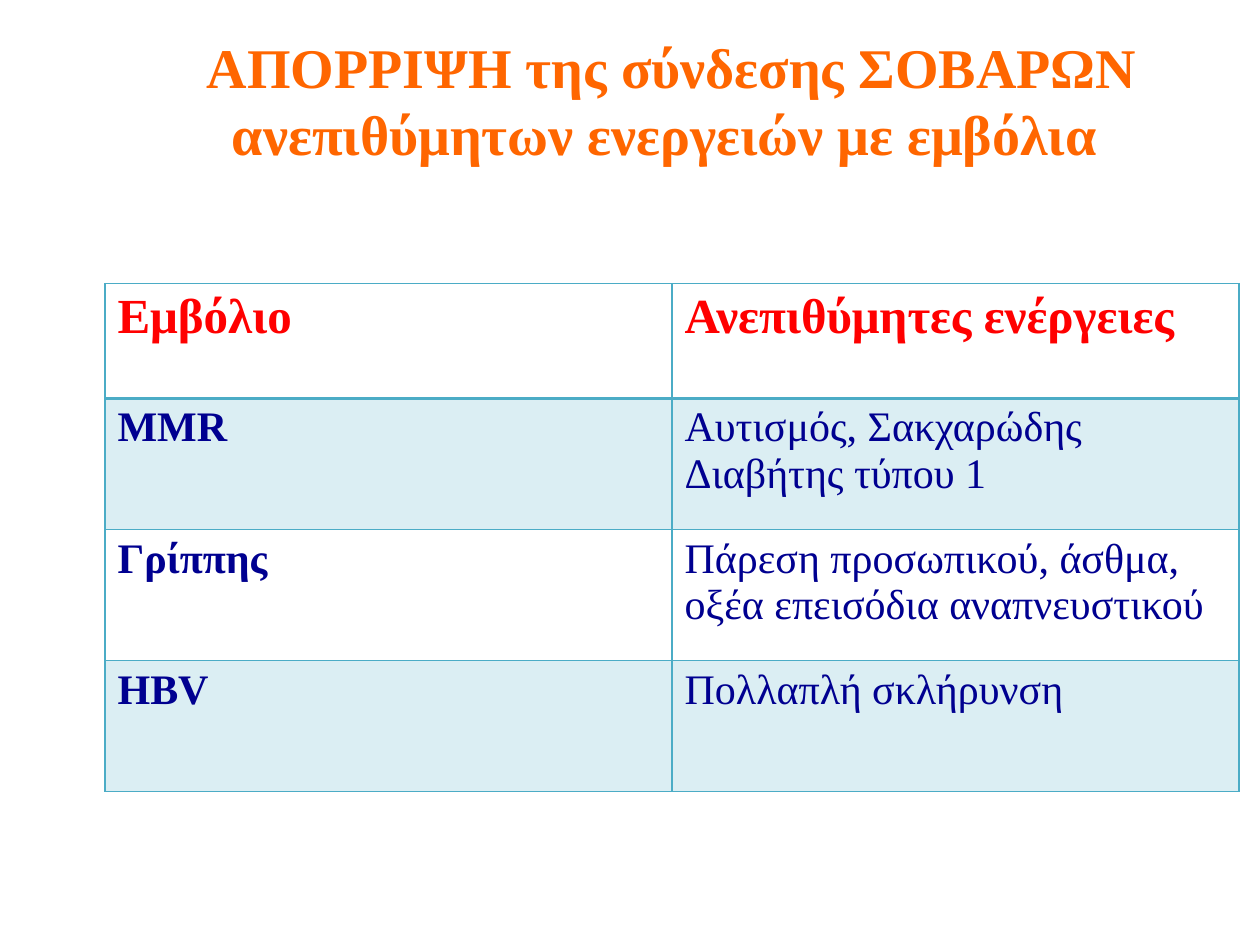
"""Builds a slide with a table of vaccines and rejected adverse reactions."""
from lxml.etree import SubElement
from pptx import Presentation
from pptx.dml.color import RGBColor
from pptx.enum.text import MSO_ANCHOR as ANCHOR, PP_ALIGN as ALIGN
from pptx.oxml.ns import qn
from pptx.util import Pt

ORANGE, RED, NAVY, TEAL = "FF6600", "FF0000", "000090", "4BACC6"
HEADER = ("Εμβόλιο", "Ανεπιθύμητες ενέργειες")
ROWS = [
    ("MMR", "Αυτισμός, Σακχαρώδης Διαβήτης τύπου 1"),
    ("Γρίππης", "Πάρεση προσωπικού, άσθμα, οξέα επεισόδια αναπνευστικού"),
    ("ΗBV", "Πολλαπλή σκλήρυνση"),
]


def rgb(color):
    return RGBColor.from_string(color)


def write(tf, text, size=24, color=NAVY, bold=True, align=ALIGN.LEFT, font="Times New Roman"):
    p = tf.paragraphs[0]
    p.alignment = align
    r = p.add_run()
    r.text = text
    r.font.name = font
    r.font.size = Pt(size)
    r.font.bold = bold
    r.font.color.rgb = rgb(color)


class Deck:
    def __init__(self, prs, line=TEAL, tint=20):
        self.line, self.tint = line, tint
        self.s = prs.slides.add_slide(prs.slide_layouts[5])

    def title(self, text, x, y, w, h):
        sp = self.s.shapes.title
        sp.left, sp.top, sp.width, sp.height = Pt(x), Pt(y), Pt(w), Pt(h)
        tf = sp.text_frame
        tf.word_wrap = True
        tf.vertical_anchor = ANCHOR.MIDDLE
        write(tf, text, size=32, color=ORANGE, align=ALIGN.CENTER)

    def border(self, cell, side, width):
        ln = SubElement(cell._tc.get_or_add_tcPr(), qn(f"a:ln{side}"), w=str(Pt(width)))
        fill = SubElement(ln, qn("a:solidFill"))
        SubElement(fill, qn("a:srgbClr"), val=self.line)

    def shade(self, cell, filled):
        if not filled:
            cell.fill.background()
            return
        cell.fill.solid()
        cell.fill.fore_color.rgb = rgb(self.line)
        clr = cell._tc.tcPr.find(f".//{qn('a:solidFill')}/{qn('a:srgbClr')}[last()]")
        clr = cell._tc.tcPr.find(qn("a:solidFill")).find(qn("a:srgbClr"))
        SubElement(clr, qn("a:alpha"), val=str(self.tint * 1000))

    def table(self, header, rows, x, y, w, heights):
        data = [header, *rows]
        shape = self.s.shapes.add_table(len(data), len(header), Pt(x), Pt(y), Pt(w), Pt(sum(heights)))
        tbl = shape.table
        tbl.first_row = tbl.horz_banding = False
        for i, texts in enumerate(data):
            tbl.rows[i].height = Pt(heights[i])
            for j, text in enumerate(texts):
                cell = tbl.cell(i, j)
                if i == 0:
                    write(cell.text_frame, text, size=28, color=RED)
                else:
                    write(cell.text_frame, text, bold=j == 0)
                widths = {"L": 1, "R": 1, "T": 2 if i == 1 else 1, "B": 2 if i == 0 else 1}
                for side, width in widths.items():
                    self.border(cell, side, width)
                self.shade(cell, i % 2 == 1)


def main():
    prs = Presentation()
    prs.slide_width, prs.slide_height = Pt(720), Pt(540)
    deck = Deck(prs)
    deck.title("ΑΠΟΡΡΙΨΗ της σύνδεσης ΣΟΒΑΡΩΝ ανεπιθύμητων ενεργειών με εμβόλια ", 60, 18, 648, 78)
    deck.table(HEADER, ROWS, 60, 162, 648, [65.5, 75, 75, 75])
    prs.save("out.pptx")


if __name__ == "__main__":
    main()
